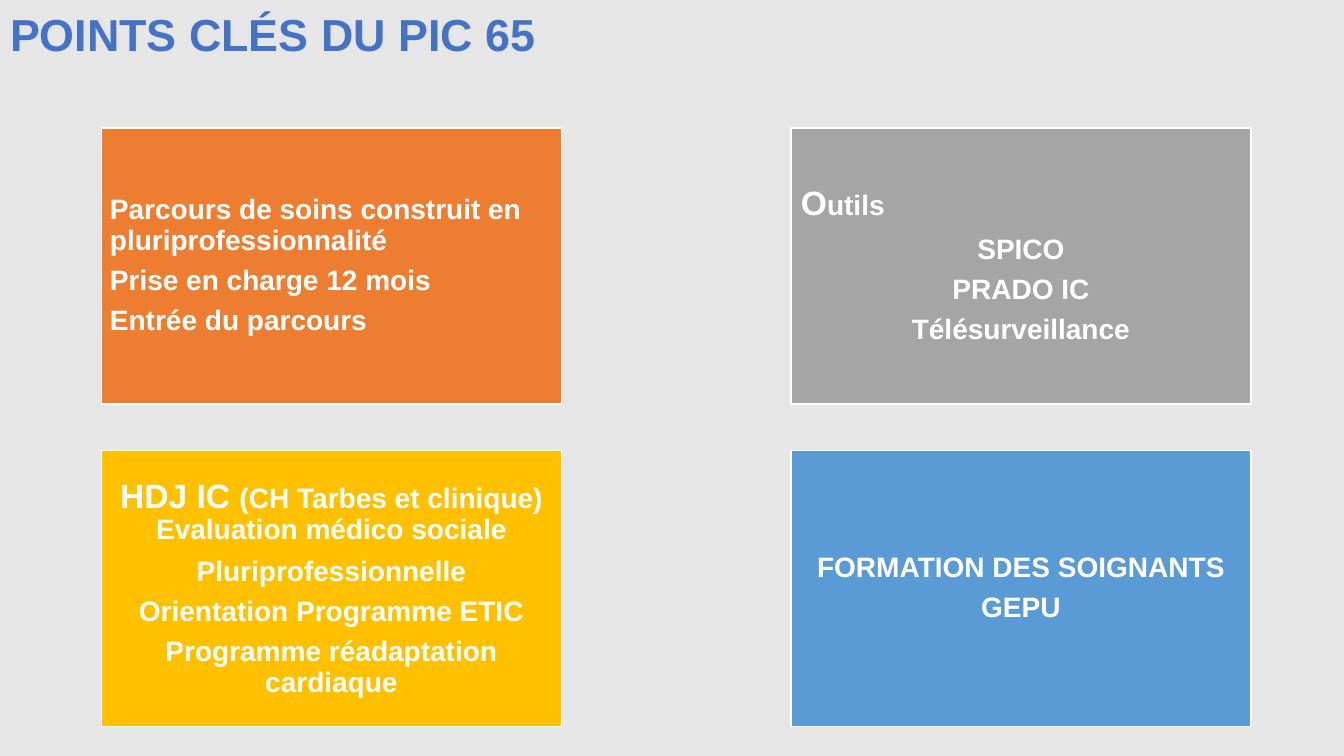
"""Build the slide listing the key points of the PIC 65 care pathway."""

from dataclasses import dataclass

from pptx import Presentation
from pptx.dml.color import RGBColor
from pptx.enum.shapes import MSO_SHAPE
from pptx.enum.text import MSO_ANCHOR, MSO_AUTO_SIZE, PP_ALIGN
from pptx.slide import Slide
from pptx.util import Pt


@dataclass(frozen=True)
class Theme:
    font: str = "Arial"
    background: RGBColor = RGBColor(0xE7, 0xE6, 0xE6)
    title: RGBColor = RGBColor(0x44, 0x72, 0xC4)
    white: RGBColor = RGBColor(0xFF, 0xFF, 0xFF)
    orange: RGBColor = RGBColor(0xED, 0x7D, 0x31)
    gray: RGBColor = RGBColor(0xA5, 0xA5, 0xA5)
    gold: RGBColor = RGBColor(0xFF, 0xC0, 0x00)
    blue: RGBColor = RGBColor(0x5B, 0x9B, 0xD5)
    title_size: float = 32
    lead_size: float = 24
    text_size: float = 20
    line_spacing: float = 0.9
    space_ratio: float = 0.35


@dataclass(frozen=True)
class Line:
    text: str
    alignment: PP_ALIGN = PP_ALIGN.CENTER
    lead: str = ""


@dataclass(frozen=True)
class Card:
    column: int
    row: int
    color: RGBColor
    inset: float
    lines: tuple[Line, ...]


THEME = Theme()
SLIDE_WIDTH, SLIDE_HEIGHT = 960, 540
CARD_LEFT, CARD_TOP = 72.5, 91.5
CARD_WIDTH, CARD_HEIGHT = 328.5, 197
COLUMN_STEP, ROW_STEP = 492.5, 230.5

CARDS = (
    Card(0, 0, THEME.orange, 6, (
        Line("Parcours de soins construit en pluriprofessionnalité", PP_ALIGN.LEFT),
        Line("Prise en charge 12 mois", PP_ALIGN.LEFT),
        Line("Entrée du parcours", PP_ALIGN.LEFT),
    )),
    Card(1, 0, THEME.gray, 7.2, (
        Line("utils", PP_ALIGN.LEFT, lead="O"),
        Line("SPICO"),
        Line("PRADO IC"),
        Line("Télésurveillance"),
    )),
    Card(0, 1, THEME.gold, 7.2, (
        Line("(CH Tarbes et clinique) Evaluation médico sociale", lead="HDJ IC "),
        Line("Pluriprofessionnelle"),
        Line("Orientation Programme ETIC"),
        Line("Programme réadaptation cardiaque"),
    )),
    Card(1, 1, THEME.blue, 6, (
        Line("FORMATION DES SOIGNANTS"),
        Line("GEPU"),
    )),
)


def add_title(slide: Slide, text: str) -> None:
    title = slide.shapes.title
    title.left, title.top, title.width, title.height = Pt(0), Pt(0), Pt(401), Pt(53.5)
    frame = title.text_frame
    frame.text = text
    frame.auto_size = MSO_AUTO_SIZE.NONE
    frame.vertical_anchor = MSO_ANCHOR.MIDDLE
    paragraph = frame.paragraphs[0]
    paragraph.alignment = PP_ALIGN.LEFT
    paragraph.line_spacing = THEME.line_spacing
    paragraph.font.name = THEME.font
    paragraph.font.size = Pt(THEME.title_size)
    paragraph.font.bold = True
    paragraph.font.color.rgb = THEME.title


def add_card(slide: Slide, card: Card) -> None:
    shape = slide.shapes.add_shape(
        MSO_SHAPE.RECTANGLE,
        Pt(CARD_LEFT + card.column * COLUMN_STEP),
        Pt(CARD_TOP + card.row * ROW_STEP),
        Pt(CARD_WIDTH),
        Pt(CARD_HEIGHT),
    )
    shape.shadow.inherit = False
    shape.fill.solid()
    shape.fill.fore_color.rgb = card.color
    shape.line.color.rgb = THEME.white
    shape.line.width = Pt(1)

    frame = shape.text_frame
    frame.word_wrap = True
    frame.vertical_anchor = MSO_ANCHOR.MIDDLE
    frame.margin_left = frame.margin_right = Pt(card.inset)
    frame.margin_top = frame.margin_bottom = Pt(card.inset)
    for index, line in enumerate(card.lines):
        paragraph = frame.add_paragraph() if index else frame.paragraphs[0]
        largest_size = THEME.lead_size if line.lead else THEME.text_size
        paragraph.alignment = line.alignment
        paragraph.line_spacing = THEME.line_spacing
        paragraph.space_after = Pt(THEME.space_ratio * largest_size)
        paragraph.font.name = THEME.font
        paragraph.font.size = Pt(THEME.text_size)
        paragraph.font.bold = True
        paragraph.font.color.rgb = THEME.white
        if line.lead:
            lead = paragraph.add_run()
            lead.text = line.lead
            lead.font.size = Pt(THEME.lead_size)
        paragraph.add_run().text = line.text


def main() -> None:
    presentation = Presentation()
    presentation.slide_width = Pt(SLIDE_WIDTH)
    presentation.slide_height = Pt(SLIDE_HEIGHT)
    title_only = presentation.slide_layouts.get_by_name("Title Only")
    slide = presentation.slides.add_slide(title_only)
    slide.background.fill.solid()
    slide.background.fill.fore_color.rgb = THEME.background
    add_title(slide, "POINTS CLÉS DU PIC 65")
    for card in CARDS:
        add_card(slide, card)
    presentation.save("out.pptx")


if __name__ == "__main__":
    main()
